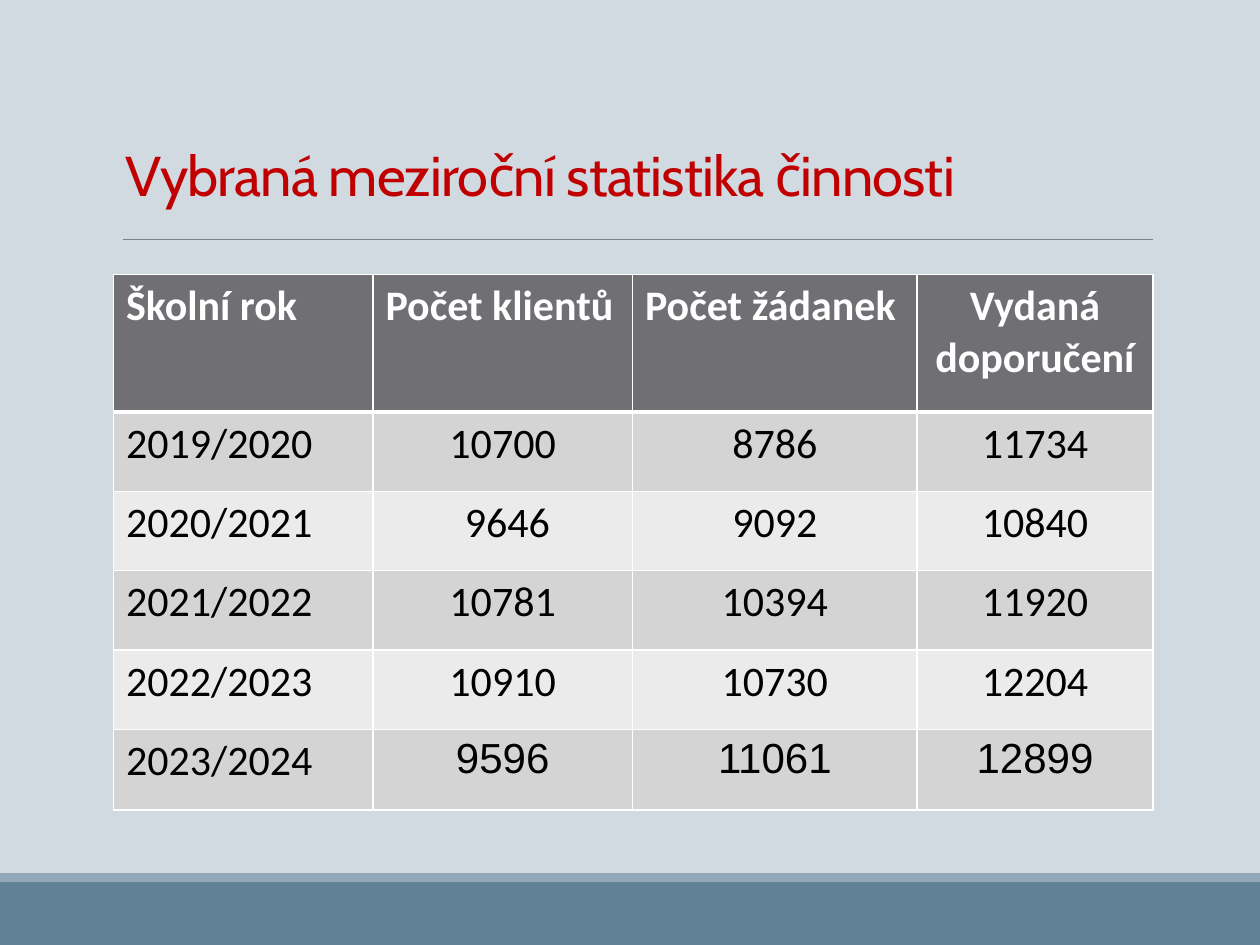
import pptx
import pptx.util
import pptx.dml.color
import pptx.enum.shapes
import pptx.enum.text
import pptx.oxml
import pptx.oxml.ns

COLORS = {
    "back": "D1D9E1", "band": "618197", "strip": "92A9B9", "rule": "808080",
    "title": "C00000", "head": "6F6F74", "odd": "D4D4D5", "even": "EBEBEB",
    "white": "FFFFFF", "black": "000000",
}
ALIGN = pptx.enum.text.PP_ALIGN
SHAPES = pptx.enum.shapes

HEAD = ["Školní rok", "Počet klientů", "Počet žádanek", "Vydaná doporučení"]
ROWS = [
    ["2019/2020", "10700", "8786", "11734"],
    ["2020/2021", " 9646", "9092", "10840"],
    ["2021/2022", "10781", "10394", "11920"],
    ["2022/2023", "10910", "10730", "12204"],
    ["2023/2024", "9596", "11061", "12899"],
]


def rgb(name):
    return pptx.dml.color.RGBColor.from_string(COLORS[name])


class Deck:
    """Draws on a grid of 100 columns by 75 rows."""

    def __init__(self):
        self.prs = pptx.Presentation()
        self.prs.slide_width = pptx.util.Inches(10)
        self.prs.slide_height = pptx.util.Inches(7.5)
        self.slide = self.prs.slides.add_slide(self.prs.slide_layouts[6])
        self.paint(self.slide.background, "back")

    def grid(self, *spans):
        """Turn x, y, x, y ... grid steps into lengths."""
        steps = self.prs.slide_width / 100, self.prs.slide_height / 75
        return [round(span * steps[i % 2]) for i, span in enumerate(spans)]

    def paint(self, part, color):
        part.fill.solid()
        part.fill.fore_color.rgb = rgb(color)

    def style(self, para, color, align=ALIGN.LEFT, space=1, **form):
        para.alignment = align
        para.line_spacing = space
        for key, value in form.items():
            setattr(para.font, key, value)
        para.font.color.rgb = rgb(color)

    def bar(self, box, color):
        shape = self.slide.shapes.add_shape(
            SHAPES.MSO_SHAPE.RECTANGLE, *self.grid(*box))
        shape.shadow.inherit = False
        self.paint(shape, color)
        shape.line.fill.background()

    def line(self, ends, color, width):
        line = self.slide.shapes.add_connector(
            SHAPES.MSO_CONNECTOR.STRAIGHT, *self.grid(*ends))
        line.line.color.rgb = rgb(color)
        line.line.width = pptx.util.Pt(width)
        line._element.spPr.append(pptx.oxml.parse_xml(
            f'<a:effectLst {pptx.oxml.ns.nsdecls("a")}/>'))

    def title(self, box, text):
        frame = self.slide.shapes.add_textbox(*self.grid(*box)).text_frame
        frame.word_wrap = True
        frame.vertical_anchor = pptx.enum.text.MSO_ANCHOR.BOTTOM
        para = frame.paragraphs[0]
        run = para.add_run()
        run.text = text
        self.style(para, "title", space=0.85, name="Cabin",
                   size=pptx.util.Pt(32))
        run._r.get_or_add_rPr().set("spc", "-50")

    def edge(self, cell, **widths):
        for side, width in widths.items():
            cell._tc.get_or_add_tcPr().append(pptx.oxml.parse_xml(
                f'<a:ln{side} {pptx.oxml.ns.nsdecls("a")} '
                f'w="{pptx.util.Pt(width)}"><a:solidFill>'
                f'<a:srgbClr val="{COLORS["white"]}"/>'
                f'</a:solidFill></a:ln{side}>'))

    def table(self, box, cols, rows, data):
        table = self.slide.shapes.add_table(
            len(rows), len(cols), *self.grid(*box)).table
        for col, span in zip(table.columns, cols):
            col.width = self.grid(span)[0]
        for row, span in zip(table.rows, rows):
            row.height = self.grid(0, span)[1]
        last = len(data) - 1
        for r, line in enumerate(data):
            fill = "head" if r == 0 else "odd" if r % 2 else "even"
            for c, text in enumerate(line):
                cell = table.cell(r, c)
                cell.text = text
                left = c == 0 or (r == 0 and c < 3)
                self.style(
                    cell.text_frame.paragraphs[0],
                    "black" if r else "white",
                    ALIGN.LEFT if left else ALIGN.CENTER,
                    name="Arial" if r == last and c else "Calibri",
                    size=pptx.util.Pt(24), bold=r == 0)
                self.edge(cell, L=0.96, R=0.96, T=3 if r == 1 else 0.96,
                          B=3 if r == 0 else 0.96)
                self.paint(cell, fill)


def main():
    deck = Deck()
    # Footer bands
    deck.bar((0, 70, 100, 5), "band")
    deck.bar((0, 69.3, 100, 0.7), "strip")
    # Title and its rule
    deck.line((9.8, 19, 91.5, 19), "rule", 0.5)
    deck.title((9, 9.1, 82.5, 7.9), "Vybraná meziroční statistika činnosti")
    # Yearly figures
    deck.table((9, 21.8, 82.5, 42.6), [20.6, 20.6, 22.6, 18.7],
               [10.9] + [6.3] * 4 + [6.4], [HEAD] + ROWS)
    deck.prs.save("out.pptx")


if __name__ == "__main__":
    main()
